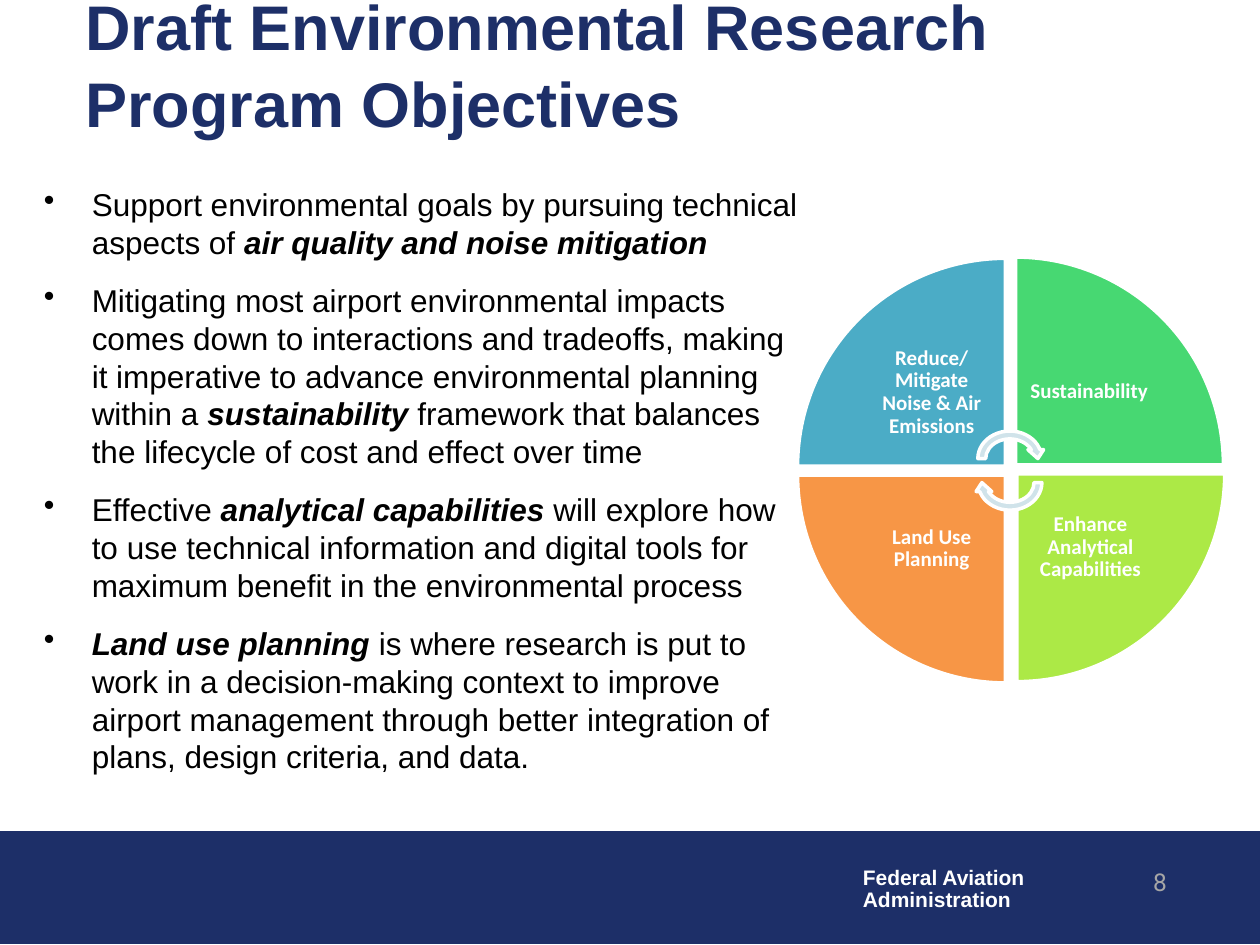
"""Build the slide on draft environmental research program objectives."""
import dataclasses

import pptx
import pptx.dml.color
import pptx.enum.shapes
import pptx.enum.text
import pptx.util
from lxml import etree

Inches = pptx.util.Inches
Pt = pptx.util.Pt
Shape = pptx.enum.shapes.MSO_SHAPE
Align = pptx.enum.text.PP_ALIGN
Anchor = pptx.enum.text.MSO_ANCHOR


@dataclasses.dataclass
class Theme:
    navy: str = "1D2F68"
    white: str = "FFFFFF"
    black: str = "000000"
    gray: str = "A6A6A6"
    pale: str = "D0E3EA"
    blue: str = "4BACC6"
    green: str = "47D872"
    lime: str = "ACE946"
    orange: str = "F79646"
    title: int = 36
    body: int = 18
    page: int = 14
    label: int = 12


theme = Theme()
rgb = pptx.dml.color.RGBColor.from_string
deck = pptx.Presentation()
deck.slide_width, deck.slide_height = Inches(10), Inches(7.5)
slide = deck.slides.add_slide(deck.slide_layouts[6])


def draw(kind, box, fill, line, width, turn=0):
    shape = slide.shapes.add_shape(kind, *map(Inches, box))
    shape.shadow.inherit = False
    shape.rotation = turn
    shape.fill.solid()
    shape.fill.fore_color.rgb = rgb(fill)
    shape.line.color.rgb = rgb(line)
    shape.line.width = Pt(width)


def write(box, paras, face, size, color, bold=None, space=None,
          align=Align.LEFT, anchor=Anchor.TOP, bullet=False):
    frame = slide.shapes.add_textbox(*map(Inches, box)).text_frame
    frame.word_wrap = True
    frame.vertical_anchor = anchor
    for i, runs in enumerate(paras):
        para = frame.paragraphs[0] if i == 0 else frame.add_paragraph()
        para.alignment = align
        if space:
            para.line_spacing = space
        if bullet:
            if i:
                para.space_before = Pt(11.6)
            props = para._p.get_or_add_pPr()
            props.set("marL", str(Inches(0.38)))
            props.set("indent", str(Inches(-0.38)))
            mark = etree.SubElement(props, pptx.oxml.ns.qn("a:buChar"))
            mark.set("char", "•")
        para.font.name = face
        para.font.size = Pt(size)
        para.font.color.rgb = rgb(color)
        para.font.bold = bold
        for text, strong in runs:
            run = para.add_run()
            run.text = text
            if strong:
                run.font.bold = run.font.italic = True


draw(Shape.RECTANGLE, (0, 6.6, 10, 0.89), theme.navy, theme.navy, 0.75)
write((6.75, 6.84, 1.6, 0.44),
      [[("Federal Aviation", False)], [("Administration", False)]],
      "Arial", theme.label, theme.white, True, Pt(12.5))
write((8.18, 6.83, 1.18, 0.5), [[("8", False)]],
      "Roboto", theme.page, theme.gray, align=Align.RIGHT)
write((0.58, 0, 9.27, 1),
      [[("Draft Environmental Research Program Objectives", False)]],
      "Arial", theme.title, theme.navy, True, Pt(44), anchor=Anchor.MIDDLE)

goals = [
    [("Support environmental goals by pursuing technical aspects of ", False),
     ("air quality and noise mitigation", True)],
    [("Mitigating most airport environmental impacts comes down to "
      "interactions and tradeoffs, making it imperative to advance "
      "environmental planning within a ", False),
     ("sustainability ", True),
     ("framework that balances the lifecycle of cost and effect over time",
      False)],
    [("Effective ", False), ("analytical capabilities ", True),
     ("will explore how to use technical information and digital tools for "
      "maximum benefit in the environmental process", False)],
    [("Land use planning ", True),
     ("is where research is put to work in a decision-making context to "
      "improve airport management through better integration of plans, "
      "design criteria, and data.", False)],
]
write((0.25, 1.42, 6.25, 4.69), goals, "Arial", theme.body, theme.black,
      space=Pt(21.6), bullet=True)

wedges = [
    ("Reduce/Mitigate Noise & Air Emissions", theme.blue, 6.33, 2.05),
    ("Sustainability", theme.green, 8.06, 2.04),
    ("Enhance Analytical Capabilities", theme.lime, 8.07, 3.76),
    ("Land Use Planning", theme.orange, 6.33, 3.77),
]
side, inner = 1.65, 1.17
for i, (name, fill, left, top) in enumerate(wedges):
    draw(Shape.PIE_WEDGE, (left, top, side, side), fill, theme.white, 2, 90 * i)
    x = left + (side - inner if i in (0, 3) else 0)
    y = top + (side - inner if i < 2 else 0)
    write((x, y, inner, inner), [[(name, False)]], "Calibri", theme.label,
          theme.white, True, 0.9, Align.CENTER, Anchor.MIDDLE)

for top, turn in ((3.39, 0), (3.58, 180)):
    draw(Shape.CIRCULAR_ARROW, (7.73, top, 0.57, 0.5), theme.pale,
         theme.white, 2, turn)

deck.save("out.pptx")
